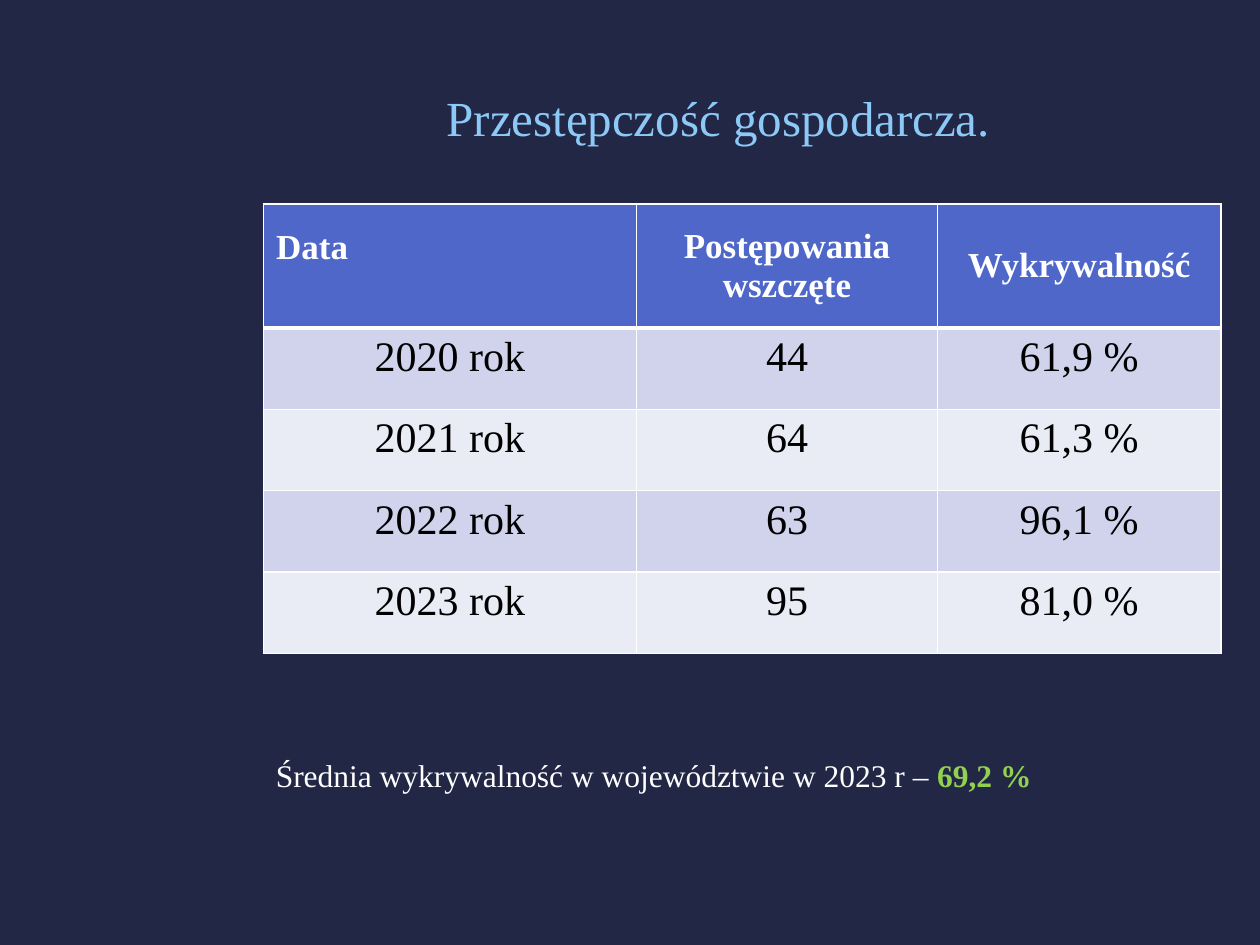
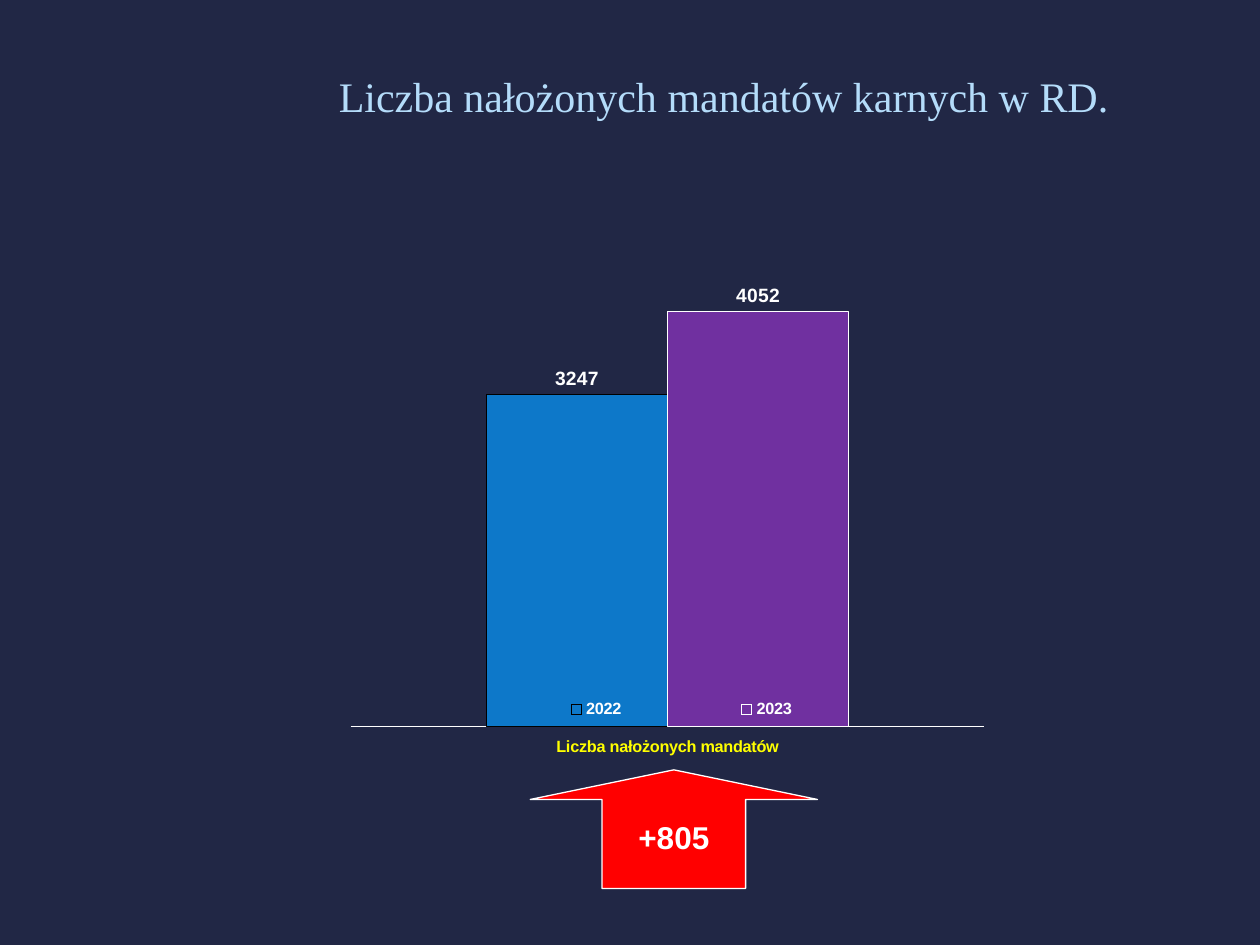
from lxml import etree
from pptx import Presentation
from pptx.chart.data import CategoryChartData as Data
from pptx.dml.color import RGBColor
from pptx.enum.chart import XL_CHART_TYPE as Kind
from pptx.enum.chart import XL_LABEL_POSITION as Spot
from pptx.enum.chart import XL_LEGEND_POSITION as Side
from pptx.enum.chart import XL_TICK_LABEL_POSITION as Tick
from pptx.enum.chart import XL_TICK_MARK as Mark
from pptx.enum.shapes import MSO_SHAPE as Shape
from pptx.enum.text import MSO_ANCHOR as Anchor
from pptx.enum.text import PP_ALIGN as Align
from pptx.oxml import parse_xml
from pptx.oxml.ns import nsdecls, qn
from pptx.util import Cm, Pt

SERIF = "Times New Roman"
SANS = "Arial"
WHITE = "FFFFFF"


def paint(color, code):
    color.rgb = RGBColor.from_string(code)


def place(node, index, box, inner=False):
    for old in node.findall(qn("c:layout")):
        node.remove(old)
    layout = parse_xml(f"<c:layout {nsdecls('c')}><c:manualLayout/></c:layout>")
    marks = [("layoutTarget", "inner")] if inner else []
    marks += [("xMode", "edge"), ("yMode", "edge"), *zip("xywh", box)]
    for tag, val in marks:
        etree.SubElement(layout[0], qn(f"c:{tag}")).set("val", str(val))
    node.insert(index, layout)


prs = Presentation()
prs.slide_width, prs.slide_height = Cm(25.4), Cm(19.05)
back = prs.slide_master.background.fill
back.solid()
paint(back.fore_color, "212745")

heads = [
    ("Przestępczość gospodarcza.", 28, "8CC9F7", (4.83, 0.76, 19.3, 3.18)),
    ("Liczba nałożonych mandatów karnych w RD.", 24, "B4DCFA", (5.89, 0.53, 17.4, 2.79)),
]
slides = []
for text, size, color, box in heads:
    slide = prs.slides.add_slide(prs.slide_layouts[5])
    title = slide.shapes.title
    title.left, title.top, title.width, title.height = map(Cm, box)
    title.text_frame.text = text
    title.text_frame.vertical_anchor = Anchor.MIDDLE
    para = title.text_frame.paragraphs[0]
    para.alignment = Align.CENTER
    para.font.name, para.font.size = SERIF, Pt(size)
    paint(para.font.color, color)
    slides.append(slide)
crime, fines = slides

rows = [
    ("Data", "Postępowania\nwszczęte", "Wykrywalność"),
    ("2020 rok", "44", "61,9 %"),
    ("2021 rok", "64", "61,3 %"),
    ("2022 rok", "63", "96,1 %"),
    ("2023 rok", "95", "81,0 %"),
]
table = crime.shapes.add_table(5, 3, Cm(5.31), Cm(4.11), Cm(19.3), Cm(9.06)).table
for col, width in zip(table.columns, (7.52, 6.07, 5.71)):
    col.width = Cm(width)
for r, row in enumerate(rows):
    top = r == 0
    table.rows[r].height = Cm(2.5 if top else 1.64)
    fill = "4E67C8" if top else "D0D3EB" if r % 2 else "E9EBF5"
    for c, text in enumerate(row):
        cell = table.cell(r, c)
        cell.text = text
        cell.vertical_anchor = Anchor.MIDDLE if top else Anchor.TOP
        cell.fill.solid()
        paint(cell.fill.fore_color, fill)
        for para in cell.text_frame.paragraphs:
            para.alignment = Align.CENTER
            para.font.name, para.font.size = SERIF, Pt(20 if top else 24)
            para.font.bold = top
            paint(para.font.color, WHITE if top else "000000")
        thick = {"T": 3 if r == 1 else 1, "B": 3 if top else 1}
        for i, side in enumerate("LRTB"):
            line = parse_xml(
                f'<a:ln{side} {nsdecls("a")} w="{Pt(thick.get(side, 1))}"><a:solidFill>'
                f'<a:srgbClr val="{WHITE}"/></a:solidFill></a:ln{side}>')
            cell._tc.tcPr.insert(i, line)
first = table.cell(0, 0)
first.margin_bottom = Cm(0.86)
first.text_frame.paragraphs[0].alignment = Align.LEFT

note = crime.shapes.add_textbox(Cm(5.31), Cm(15.11), Cm(19), Cm(2.57)).text_frame
note.word_wrap = True
para = note.paragraphs[0]
para.font.name, para.font.size = SERIF, Pt(18)
for text, color, bold in [
    ("Średnia wykrywalność w województwie w 2023 r – ", WHITE, False),
    ("69,2 %", "92D050", True),
]:
    run = para.add_run()
    run.text, run.font.bold = text, bold
    paint(run.font.color, color)

arrow = fines.shapes.add_shape(Shape.UP_ARROW, Cm(10.69), Cm(15.52), Cm(5.79), Cm(2.39))
arrow.adjustments[1] = 0.25
arrow.shadow.inherit = False
arrow.fill.solid()
paint(arrow.fill.fore_color, "FF0000")
paint(arrow.line.color, WHITE)
arrow.line.width = Pt(0.75)
frame = arrow.text_frame
frame.text, frame.word_wrap = "+805", False
frame.vertical_anchor = Anchor.MIDDLE
para = frame.paragraphs[0]
para.alignment = Align.CENTER
para.font.name, para.font.size, para.font.bold = SANS, Pt(18), True
paint(para.font.color, WHITE)

bars = [("2022", 3247, "0D78C9", "000000", 0.25), ("2023", 4052, "7030A0", WHITE, 0.52)]
data = Data()
data.categories = ["Liczba nałożonych mandatów"]
for name, val, *look in bars:
    data.add_series(name, [val])
chart = fines.shapes.add_chart(
    Kind.COLUMN_CLUSTERED, Cm(6.5), Cm(4.11), Cm(14.2), Cm(11.2), data).chart
chart.has_title = False
chart.font.name, chart.font.size, chart.font.bold = SANS, Pt(9.3), True
paint(chart.font.color, WHITE)

plot = chart.plots[0]
plot.gap_width, plot.overlap, plot.vary_by_categories = 150, 0, False
for series, (name, val, fill, edge, width) in zip(plot.series, bars):
    series.format.fill.solid()
    paint(series.format.fill.fore_color, fill)
    paint(series.format.line.color, edge)
    series.format.line.width = Pt(width)
    labels = series.data_labels
    labels.show_value, labels.position = True, Spot.OUTSIDE_END
    labels.font.name, labels.font.size, labels.font.bold = SANS, Pt(11), True
    paint(labels.font.color, WHITE)

base = chart.category_axis
base.major_tick_mark = base.minor_tick_mark = Mark.NONE
base.tick_label_position = Tick.LOW
font = base.tick_labels.font
font.name, font.size, font.bold = SANS, Pt(9.3), True
paint(font.color, "FFFF00")
paint(base.format.line.color, WHITE)
base.format.line.width = Pt(0.13)
scale = chart.value_axis
scale.visible = scale.has_major_gridlines = False
scale.minimum_scale, scale.maximum_scale, scale.major_unit = 0, 5000, 1000

chart.has_legend = True
legend = chart.legend
legend.position, legend.include_in_layout = Side.TOP, False
place(legend._element, 1, (0.19, 0.89, 0.64, 0.04))
area = chart._chartSpace.chart.plotArea
place(area, 0, (0.04, 0.02, 0.9, 0.92), True)

prs.save("out.pptx")
